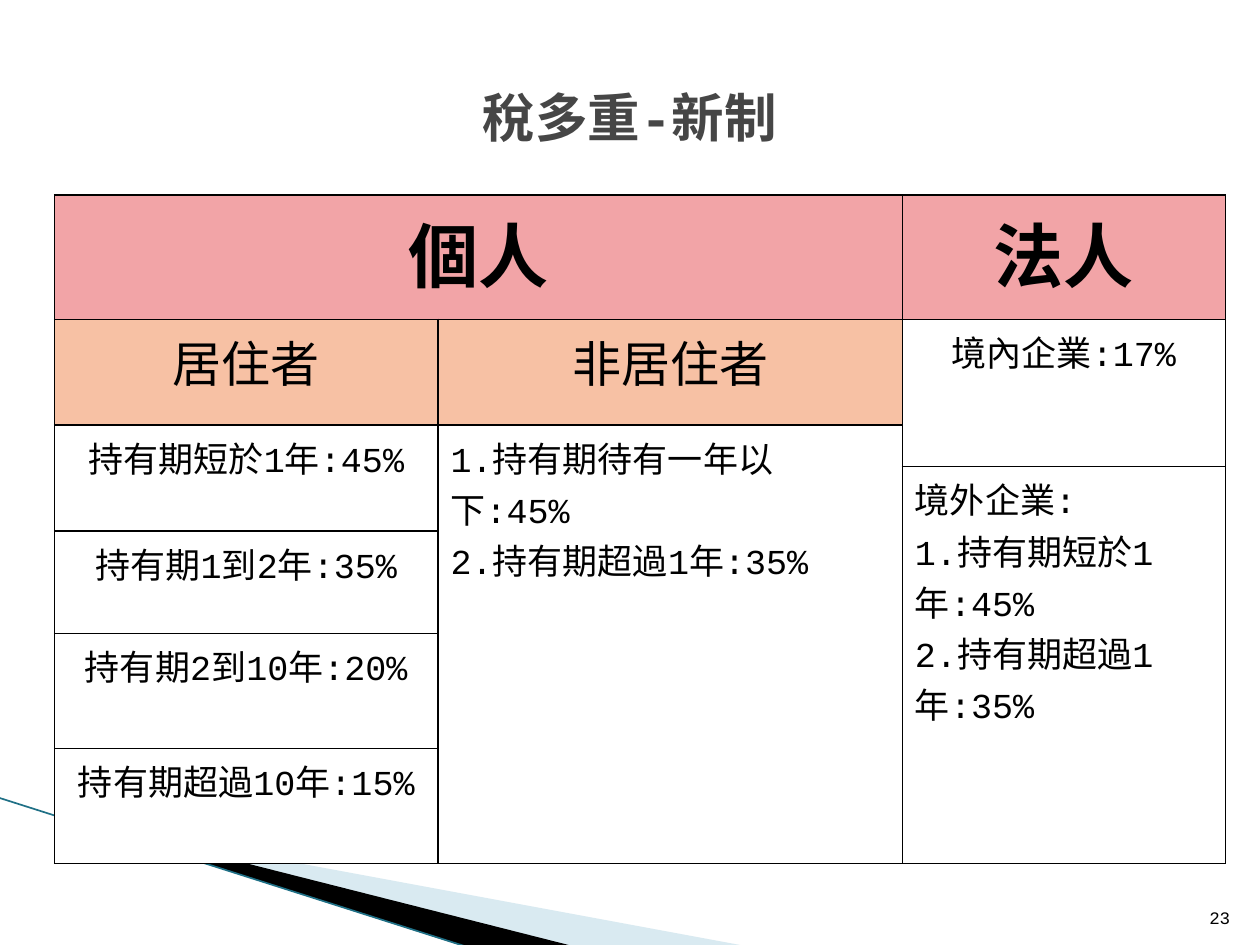
from pptx import Presentation
from pptx.dml.color import RGBColor
from pptx.enum.shapes import MSO_CONNECTOR as Conn
from pptx.enum.text import MSO_ANCHOR as Anchor, PP_ALIGN as Align
from pptx.oxml import parse_xml
from pptx.oxml.ns import nsdecls
from pptx.oxml.xmlchemy import OxmlElement as Elem
from pptx.util import Cm, Pt

FONT = "Courier New"
BLACK, WHITE, PINK, PEACH = "000000", "FFFFFF", "F2A4A7", "F7C1A4"
COLS = [7.73, 9.36, 6.51]
ROWS = [2.51, 2.13, 0.84, 1.3, 2.06, 2.32, 2.32]

# row, column, row span, column span, fill, size, bold, centred, paragraphs
CELLS = [
    (0, 0, 1, 2, PINK, 40, True, True, ["個人"]),
    (0, 2, 1, 1, PINK, 40, True, True, ["法人"]),
    (1, 0, 1, 1, PEACH, 28, False, True, ["居住者"]),
    (1, 1, 1, 1, PEACH, 28, False, True, ["非居住者"]),
    (1, 2, 2, 1, WHITE, 20, False, True, ["境內企業:17%"]),
    (2, 0, 2, 1, WHITE, 20, False, True, ["持有期短於1年:45%"]),
    (2, 1, 5, 1, WHITE, 20, False, False,
     ["1.持有期待有一年以下:45%", "2.持有期超過1年:35%"]),
    (3, 2, 4, 1, WHITE, 20, False, False,
     ["境外企業:\n1.持有期短於1年:45%", "2.持有期超過1年:35%"]),
    (4, 0, 1, 1, WHITE, 20, False, True, ["持有期1到2年:35%"]),
    (5, 0, 1, 1, WHITE, 20, False, True, ["持有期2到10年:20%"]),
    (6, 0, 1, 1, WHITE, 20, False, True, ["持有期超過10年:15%"]),
]


def rgb(code):
    return RGBColor.from_string(code)


def write(frame, paras, size, color, bold, align):
    for i, text in enumerate(paras):
        para = frame.paragraphs[0] if i == 0 else frame.add_paragraph()
        para.alignment = align
        for j, line in enumerate(text.split("\n")):
            if j:
                para.add_line_break()
            run = para.add_run()
            run.text = line
            font = run.font
            font.name, font.size, font.bold = FONT, Pt(size), bold
            font.color.rgb = rgb(color)


def label(slide, box, text, size, color, bold, align, anchor):
    frame = slide.shapes.add_textbox(*map(Cm, box)).text_frame
    frame.word_wrap = True
    frame.vertical_anchor = anchor
    write(frame, [text], size, color, bold, align)


def wedge(slide, left, top, points, color, alpha=None):
    spots = [(Cm(left + x), Cm(top + y)) for x, y in points]
    form = slide.shapes.build_freeform(*spots[0])
    form.add_line_segments(spots[1:], close=True)
    shape = form.convert_to_shape()
    shape.shadow.inherit = False
    shape.line.fill.background()
    shape.fill.solid()
    shape.fill.fore_color.rgb = rgb(color)
    if alpha:
        tint = Elem("a:alpha")
        tint.set("val", str(alpha * 1000))
        shape.fill.fore_color._xFill[0].append(tint)


def corner(slide, left, top):
    # Pale and black wedges, then the thin edge line
    wedge(slide, left + 1.4, top + 0.43,
          [(0, 0.03), (13.71, 2.57), (10.18, 2.57), (0, 0)], "A0CBDC", 40)
    wedge(slide, left + 1.35, top + 0.4,
          [(0, 0), (10.26, 2.6), (8.1, 2.62), (0.02, 0.03)], BLACK)
    edge = slide.shapes.add_connector(
        Conn.STRAIGHT, Cm(left), Cm(top), Cm(left + 9.48), Cm(top + 3.02))
    edge.line.color.rgb = rgb("1F7086")
    edge.line.width = Pt(0.95)
    edge._element.spPr.append(Elem("a:effectLst"))


def border(cell):
    props = cell._tc.get_or_add_tcPr()
    for side in "LRTB":
        props.append(parse_xml(
            f'<a:ln{side} {nsdecls("a")} w="12700"><a:solidFill>'
            f'<a:srgbClr val="{BLACK}"/></a:solidFill></a:ln{side}>'))


def rates(slide, left, top):
    box = map(Cm, (left, top, sum(COLS), sum(ROWS)))
    table = slide.shapes.add_table(len(ROWS), len(COLS), *box).table
    table.first_row = table.horz_banding = False
    for col, width in zip(table.columns, COLS):
        col.width = Cm(width)
    for row, height in zip(table.rows, ROWS):
        row.height = Cm(height)
    for cell in table.iter_cells():
        border(cell)
        cell.fill.solid()
        cell.fill.fore_color.rgb = rgb(WHITE)
    for row, col, down, over, fill, size, bold, mid, paras in CELLS:
        cell = table.cell(row, col)
        if down * over > 1:
            cell.merge(table.cell(row + down - 1, col + over - 1))
        cell.fill.fore_color.rgb = rgb(fill)
        write(cell.text_frame, paras, size, BLACK, bold,
              Align.CENTER if mid else Align.LEFT)


def main():
    deck = Presentation()
    deck.slide_width, deck.slide_height = Cm(25.4), Cm(19.05)
    slide = deck.slides.add_slide(deck.slide_layouts[6])
    corner(slide, -0.03, 16.08)
    # Title
    label(slide, (1.27, 0.76, 22.86, 3.18), "稅多重-新制", 30, "464646",
          True, Align.CENTER, Anchor.MIDDLE)
    rates(slide, 1.1, 3.93)
    # Page number
    label(slide, (24.03, 17.81, 1.02, 1.02), "23", 10, BLACK,
          False, Align.RIGHT, Anchor.BOTTOM)
    deck.save("out.pptx")


if __name__ == "__main__":
    main()
